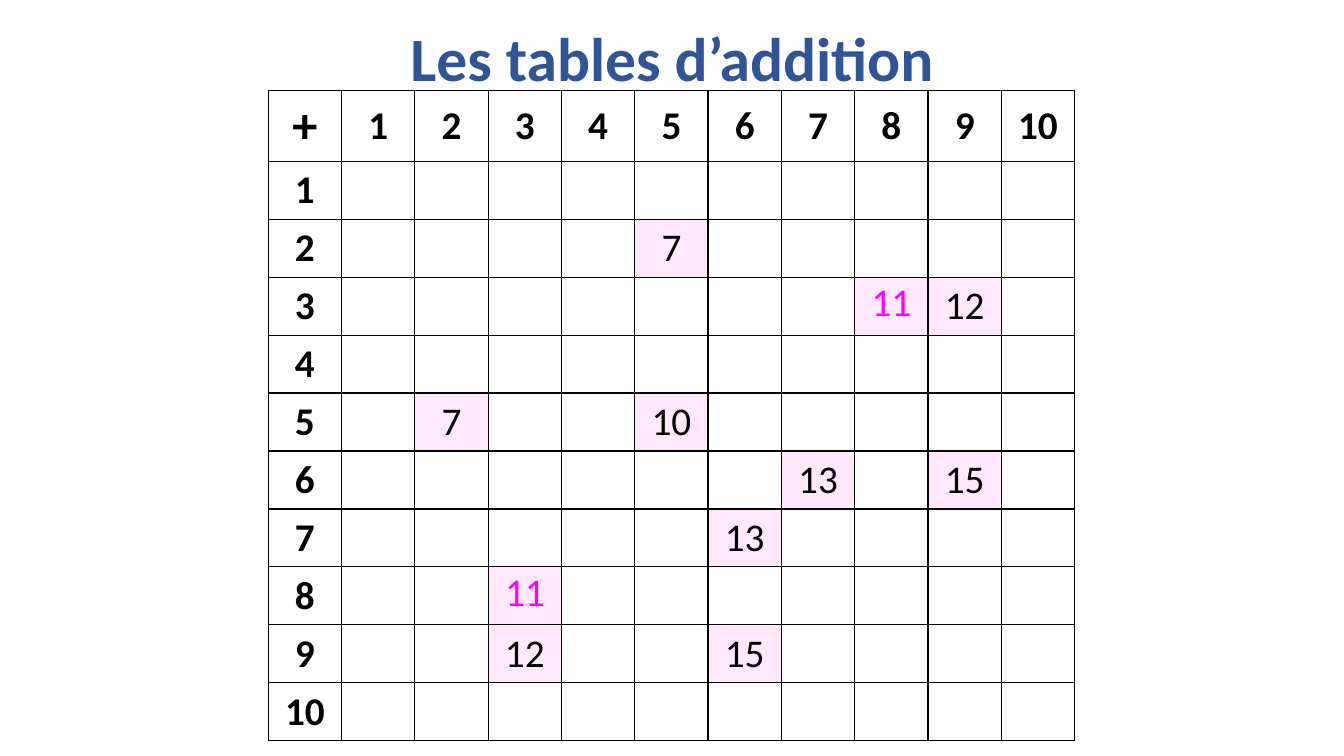
import lxml.etree
import pptx
import pptx.dml.color
import pptx.enum.text
import pptx.oxml.ns
import pptx.util

SLIDE_WIDTH, SLIDE_HEIGHT = 13.33, 7.5
FONT = "Calibri"
BLACK, WHITE, BLUE = "000000", "FFFFFF", "2F5597"
PINK, MAGENTA = "FFE7FC", "FF00FF"

TITLE = "Les tables d’addition"
NUMBERS = range(1, 11)
# (row number, column number) of the sums on show
SUMS = [(2, 5), (3, 9), (5, 2), (5, 5), (6, 7), (6, 9), (7, 6), (9, 3), (9, 6)]
ANSWERS = [(3, 8), (8, 3)]

TABLE_LEFT, TABLE_TOP, TABLE_WIDTH = 2.66, 0.9, 8
HEADER_HEIGHT, ROW_HEIGHT = 0.7, 0.575
COLUMN_WIDTH = TABLE_WIDTH / (len(NUMBERS) + 1)
ANSWER_WIDTH, ANSWER_HEIGHT, ANSWER_RISE = 1.18, 0.57, 0.05

MIDDLE = pptx.enum.text.MSO_ANCHOR.MIDDLE
TOP = pptx.enum.text.MSO_ANCHOR.TOP


def color(hex_string):
    return pptx.dml.color.RGBColor.from_string(hex_string)


def write(text_frame, text, size, hex_color, bold=False):
    paragraph = text_frame.paragraphs[0]
    paragraph.alignment = pptx.enum.text.PP_ALIGN.CENTER
    run = paragraph.add_run()
    run.text = str(text)
    run.font.name = FONT
    run.font.size = pptx.util.Pt(size)
    run.font.bold = bold
    run.font.color.rgb = color(hex_color)
    return paragraph


def add_text(slide, box, anchor, *text_style):
    shape = slide.shapes.add_textbox(*map(pptx.util.Inches, box))
    shape.text_frame.word_wrap = True
    shape.text_frame.vertical_anchor = anchor
    return write(shape.text_frame, *text_style)


def add_borders(cell):
    """Draw a 1 pt black line on each side; lines come before the fill."""
    properties = cell._tc.get_or_add_tcPr()
    for position, side in enumerate(("lnL", "lnR", "lnT", "lnB")):
        line = lxml.etree.Element(pptx.oxml.ns.qn(f"a:{side}"), w=str(pptx.util.Pt(1)))
        fill = lxml.etree.SubElement(line, pptx.oxml.ns.qn("a:solidFill"))
        lxml.etree.SubElement(fill, pptx.oxml.ns.qn("a:srgbClr"), val=BLACK)
        properties.insert(position, line)


def fill_cell(cell, row, column):
    cell.vertical_anchor = MIDDLE
    if row == 0 or column == 0:
        cell.fill.solid()
        cell.fill.fore_color.rgb = color(WHITE)
        write(cell.text_frame, row + column or "+", 28 if row + column else 36, BLACK, True)
    elif (row, column) in SUMS + ANSWERS:
        cell.fill.solid()
        cell.fill.fore_color.rgb = color(PINK)
        if (row, column) in SUMS:
            write(cell.text_frame, row + column, 28, BLACK)
    else:
        cell.fill.background()
    add_borders(cell)


def add_addition_table(slide):
    count = len(NUMBERS) + 1
    height = HEADER_HEIGHT + len(NUMBERS) * ROW_HEIGHT
    box = map(pptx.util.Inches, (TABLE_LEFT, TABLE_TOP, TABLE_WIDTH, height))
    table = slide.shapes.add_table(count, count, *box).table
    table.first_row = table.horz_banding = False
    for index in range(count):
        table.columns[index].width = pptx.util.Inches(COLUMN_WIDTH)
        table.rows[index].height = pptx.util.Inches(ROW_HEIGHT if index else HEADER_HEIGHT)
        for column in range(count):
            fill_cell(table.cell(index, column), index, column)


def add_answer(slide, row, column):
    left = TABLE_LEFT + (column + 0.5) * COLUMN_WIDTH - ANSWER_WIDTH / 2
    top = TABLE_TOP + HEADER_HEIGHT + (row - 1) * ROW_HEIGHT - ANSWER_RISE
    add_text(slide, (left, top, ANSWER_WIDTH, ANSWER_HEIGHT), TOP, row + column, 28, MAGENTA)


def main():
    presentation = pptx.Presentation()
    presentation.slide_width = pptx.util.Inches(SLIDE_WIDTH)
    presentation.slide_height = pptx.util.Inches(SLIDE_HEIGHT)
    slide = presentation.slides.add_slide(presentation.slide_layouts[6])
    title = add_text(slide, (0.92, -0.11, 11.5, 1.45), MIDDLE, TITLE, 44, BLUE, True)
    title.line_spacing = 0.9
    add_addition_table(slide)
    for row, column in ANSWERS:
        add_answer(slide, row, column)
    presentation.save("out.pptx")


if __name__ == "__main__":
    main()
